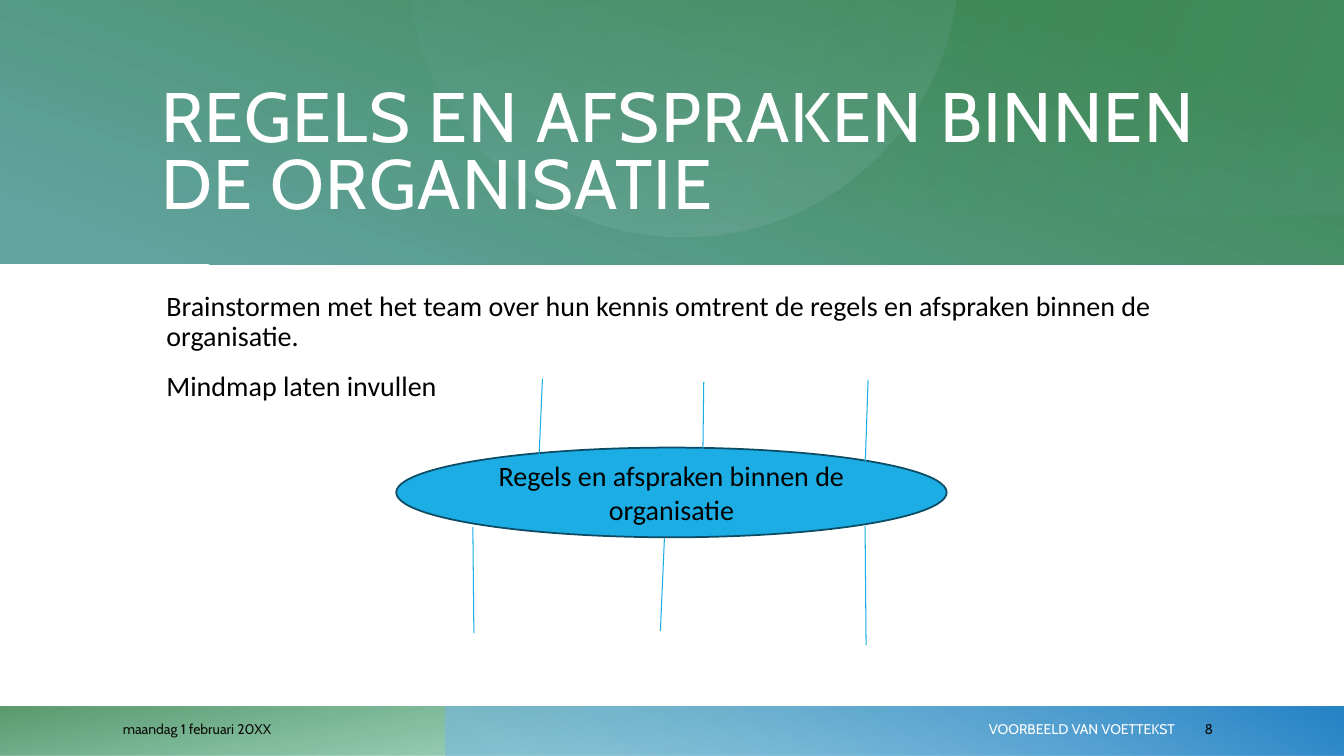
from dataclasses import dataclass
from math import asin, cos, pi, sin

from lxml.etree import SubElement
from pptx import Presentation
from pptx.dml.color import RGBColor
from pptx.enum.shapes import MSO_CONNECTOR, MSO_SHAPE
from pptx.enum.text import MSO_ANCHOR, MSO_AUTO_SIZE, PP_ALIGN
from pptx.oxml.ns import qn
from pptx.util import Inches, Pt


@dataclass(frozen=True)
class Theme:
    heading_font: str = "Cabin"
    body_font: str = "Calibri"
    title_size: int = 50
    body_size: int = 20
    footer_size: int = 10
    white: str = "FFFFFF"
    black: str = "000000"
    dark: str = "0D0D0D"
    teal: str = "62A39F"
    pale_teal: str = "A1C8C5"
    mint: str = "42BA97"
    green: str = "3E8853"
    sky: str = "75B6E5"
    blue: str = "2683C6"
    accent: str = "1CADE4"
    outline: str = "0C4C64"


THEME = Theme()


def rgb(value):
    return RGBColor.from_string(value)


def gradient(shape, stops, angle):
    """Fill with two (position, colour, opacity) stops, angle counter-clockwise."""
    shape.shadow.inherit = False
    shape.line.fill.background()
    shape.fill.gradient()
    shape.fill.gradient_angle = angle
    gradient_stops = shape.fill.gradient_stops
    for stop, (position, colour, _) in zip(gradient_stops, stops):
        stop.position = position
        stop.color.rgb = rgb(colour)
    colours = shape._element.spPr.iter(qn("a:srgbClr"))
    for colour_element, (_, _, opacity) in zip(list(colours), stops):
        SubElement(colour_element, qn("a:alpha"), val=str(round(opacity * 100000)))


def band(slide, left, top, width, height, stops, angle):
    rectangle = slide.shapes.add_shape(
        MSO_SHAPE.RECTANGLE, Inches(left), Inches(top), Inches(width), Inches(height))
    gradient(rectangle, stops, angle)


def format_text(frame, font, size, colour, align=PP_ALIGN.LEFT):
    frame.word_wrap = True
    frame.auto_size = MSO_AUTO_SIZE.NONE
    for paragraph in frame.paragraphs:
        paragraph.alignment = align
        for run in paragraph.runs:
            run.font.name = font
            run.font.size = Pt(size)
            run.font.color.rgb = rgb(colour)


def text_box(slide, left, top, width, height, text):
    box = slide.shapes.add_textbox(
        Inches(left), Inches(top), Inches(width), Inches(height))
    box.text_frame.text = text
    return box.text_frame


def circle_segment(slide, center_x, center_y, radius):
    """Draw the part of a circle that hangs below the top edge of the slide."""
    steps = 90
    start = asin(-center_y / radius)
    angles = [start + (pi - 2 * start) * step / steps for step in range(steps + 1)]
    points = [(Inches(center_x + radius * cos(a)), Inches(center_y + radius * sin(a)))
              for a in angles]
    builder = slide.shapes.build_freeform(*points[0])
    builder.add_line_segments(points[1:], close=True)
    gradient(builder.convert_to_shape(),
             [(0, THEME.teal, 0.12), (1, THEME.pale_teal, 0.2)], 283)


def header(slide, left, top, width, height, text):
    band(slide, left, top, width, height,
         [(0.08, THEME.teal, 1), (0.86, THEME.green, 1)], 70)
    circle_segment(slide, left + 6.77, top - 0.38, 2.73)
    band(slide, left + 4.44, top, width - 4.44, 2.13,
         [(0, THEME.teal, 0.16), (0.62, THEME.green, 0)], 160)

    title = slide.shapes.title
    slide.shapes._spTree.append(title._element)  # bring in front of the bands
    title.left, title.top = Inches(left + 1.5), Inches(top + 0.87)
    title.width, title.height = Inches(11.2), Inches(1.35)
    frame = title.text_frame
    frame.text = text
    frame.vertical_anchor = MSO_ANCHOR.MIDDLE
    format_text(frame, THEME.heading_font, THEME.title_size, THEME.white)
    paragraph = frame.paragraphs[0]
    paragraph.line_spacing = 0.8
    paragraph.runs[0].font._element.set("spc", "100")


def instructions(slide, left, top, width, height, text):
    frame = text_box(slide, left, top, width, height, text)
    frame.margin_left = frame.margin_right = Inches(0.05)
    frame.margin_top = frame.margin_bottom = Inches(0.05)
    format_text(frame, THEME.body_font, THEME.body_size, THEME.black)
    for paragraph in frame.paragraphs:
        paragraph.line_spacing = 0.9
        paragraph.space_before, paragraph.space_after = Pt(12), Pt(2)
        paragraph._p.get_or_add_pPr().set("marL", str(Inches(0.1)))


def mindmap(slide, left, top, width, height, topic):
    """Draw the topic ellipse with its open branches above and below."""
    ellipse = slide.shapes.add_shape(
        MSO_SHAPE.OVAL, Inches(left), Inches(top), Inches(width), Inches(height))
    ellipse.shadow.inherit = False
    ellipse.fill.solid()
    ellipse.fill.fore_color.rgb = rgb(THEME.accent)
    ellipse.line.color.rgb = rgb(THEME.outline)
    ellipse.line.width = Pt(1.25)
    ellipse.text_frame.text = topic
    ellipse.text_frame.vertical_anchor = MSO_ANCHOR.MIDDLE
    format_text(ellipse.text_frame, THEME.body_font, THEME.body_size,
                THEME.black, PP_ALIGN.CENTER)

    branches = [
        (1.41, 0.24, 1.45, -0.68), (3.04, 0.18, 3.05, -0.65), (4.65, 0.21, 4.68, -0.67),
        (0.76, 0.79, 0.77, 1.84), (2.66, 0.9, 2.62, 1.82), (4.65, 0.78, 4.66, 1.96),
    ]
    for start_x, start_y, end_x, end_y in branches:
        branch = slide.shapes.add_connector(
            MSO_CONNECTOR.STRAIGHT,
            Inches(left + start_x), Inches(top + start_y),
            Inches(left + end_x), Inches(top + end_y))
        branch.line.color.rgb = rgb(THEME.accent)
        branch.line.width = Pt(0.75)
        SubElement(branch._element.spPr, qn("a:effectLst"))


def footer(slide, left, top, width, height, date, note, number):
    band(slide, left, top, width, height,
         [(0.14, THEME.mint, 0.28), (1, THEME.green, 0.85)], 100)
    band(slide, left + 4.42, top, width - 4.42, height,
         [(0.09, THEME.sky, 0.55), (0.99, THEME.blue, 1)], 60)
    entries = [
        (1.12, 2.36, date, THEME.dark, PP_ALIGN.LEFT),
        (5.3, 6.45, note, THEME.white, PP_ALIGN.RIGHT),
        (11.85, 1.06, number, THEME.dark, PP_ALIGN.LEFT),
    ]
    for offset, entry_width, text, colour, align in entries:
        frame = text_box(slide, left + offset, top + 0.07, entry_width, 0.3, text)
        frame.vertical_anchor = MSO_ANCHOR.MIDDLE
        format_text(frame, THEME.heading_font, THEME.footer_size, colour, align)


def main():
    presentation = Presentation()
    presentation.slide_width, presentation.slide_height = Inches(13.33), Inches(7.5)
    slide = presentation.slides.add_slide(presentation.slide_layouts[5])
    header(slide, 0, 0, 13.33, 2.62, "REGELS EN AFSPRAKEN BINNEN DE ORGANISATIE")
    instructions(slide, 1.5, 2.85, 11.14, 3.79,
                 "Brainstormen met het team over hun kennis omtrent de regels en "
                 "afspraken binnen de organisatie.\nMindmap laten invullen")
    mindmap(slide, 3.93, 4.44, 5.46, 0.89, "Regels en afspraken binnen de organisatie")
    footer(slide, 0, 7.01, 13.33, 0.49,
           "maandag 1 februari 20XX", "VOORBEELD VAN VOETTEKST", "8")
    presentation.save("out.pptx")


if __name__ == "__main__":
    main()
